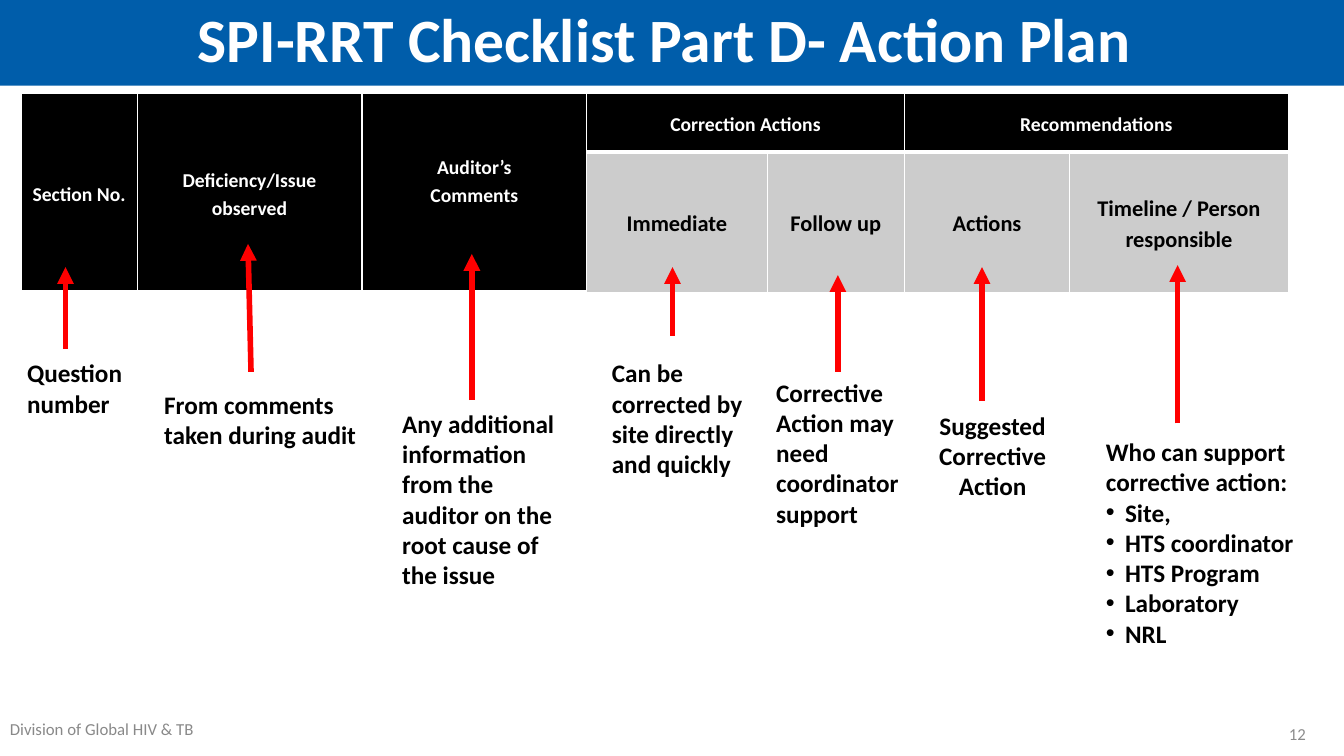
"""Build the action plan slide of the SPI-RRT checklist."""
from dataclasses import dataclass

from lxml.etree import SubElement as Sub
from pptx import Presentation
from pptx.dml.color import RGBColor as Rgb
from pptx.enum.shapes import MSO_CONNECTOR as Link
from pptx.enum.text import MSO_ANCHOR as Anchor, PP_ALIGN as Align
from pptx.oxml.ns import qn
from pptx.util import Inches, Pt

TITLE = "SPI-RRT Checklist Part D- Action Plan "
FOOTER = "Division of Global HIV & TB"
NUMBER = "12"

WIDTHS = [1.15, 2.23, 2.23, 1.79, 1.36, 1.64, 2.17]
HEIGHTS = [0.58, 1.39]
TALL = [["Section No."], ["Deficiency/Issue observed"], ["Auditor’s", "Comments"]]
GROUPS = {3: "Correction Actions", 5: "Recommendations"}
LOWER = ["Immediate", "Follow up", "Actions", "Timeline / Person responsible"]

NOTES = [
    (["Question number"], (0.17, 3.5, 1.73, 0.71), Align.LEFT),
    (["From comments taken during audit"], (1.53, 3.81, 2.38, 0.71), Align.LEFT),
    (["Any additional information from the auditor on the root cause of the issue"],
     (3.89, 4, 1.89, 1.92), Align.LEFT),
    (["Can be corrected by site directly and quickly"],
     (5.97, 3.5, 1.67, 1.31), Align.LEFT),
    (["Corrective Action may need coordinator support"],
     (7.6, 3.69, 1.84, 1.62), Align.LEFT),
    (["Suggested Corrective Action"], (9.01, 4.02, 1.67, 1.01), Align.CENTER),
    (["Who can support corrective action:", "• Site,", "• HTS coordinator",
      "• HTS Program", "• Laboratory", "• NRL"],
     (10.87, 4.28, 2.08, 2.22), Align.LEFT),
]
ARROWS = [
    (0.65, 3.46, 0.65, 2.65),
    (2.49, 3.69, 2.46, 2.42),
    (4.68, 3.97, 4.68, 2.52),
    (6.67, 3.33, 6.67, 2.65),
    (8.31, 3.69, 8.31, 2.73),
    (9.74, 3.98, 9.74, 2.65),
    (11.68, 4.2, 11.68, 2.63),
]


@dataclass(frozen=True)
class Theme:
    """Colours, font and type sizes."""
    font: str = "Calibri"
    blue: str = "005DAA"
    white: str = "FFFFFF"
    black: str = "000000"
    gray: str = "CCCCCC"
    faint: str = "898989"
    dim: str = "8C8C8C"
    red: str = "FF0000"
    title: int = 44
    note: int = 18
    lower: int = 16
    head: int = 14
    small: int = 12


LOOK = Theme()


def inch(*vals):
    """Turn numbers into lengths."""
    return [Inches(val) for val in vals]


def paint(item, tone):
    """Give a solid fill."""
    item.fill.solid()
    item.fill.fore_color.rgb = Rgb.from_string(tone)


def write(frame, lines, size=LOOK.note, tone=LOOK.black, bold=True,
          align=Align.LEFT, space=None, anchor=Anchor.TOP):
    """Set lines of text; a leading bullet makes a list item."""
    frame.word_wrap = True
    frame.vertical_anchor = anchor
    for rank, line in enumerate(lines):
        para = frame.paragraphs[0] if rank == 0 else frame.add_paragraph()
        para.alignment = align
        if space:
            para.line_spacing = space
        if line.startswith("• "):
            props = para._p.get_or_add_pPr()
            props.set("marL", str(Inches(0.19)))
            props.set("indent", str(-Inches(0.19)))
            Sub(props, qn("a:buFont"), typeface="Arial")
            Sub(props, qn("a:buChar"), char="•")
        run = para.add_run()
        run.text = line.removeprefix("• ")
        run.font.name = LOOK.font
        run.font.size = Pt(size)
        run.font.bold = bold
        run.font.color.rgb = Rgb.from_string(tone)


def label(slide, lines, box, **style):
    """Add a text box."""
    write(slide.shapes.add_textbox(*inch(*box)).text_frame, lines, **style)


def edge(cell, base):
    """Draw white cell borders."""
    props = cell._tc.get_or_add_tcPr()
    for side, wide in zip("LRTB", (1, 1, 1, base)):
        line = Sub(props, qn(f"a:ln{side}"), w=str(Pt(wide)))
        Sub(Sub(line, qn("a:solidFill")), qn("a:srgbClr"), val=LOOK.white)


def header(slide):
    """Add the title band."""
    band = slide.shapes.title
    band.left, band.top, band.width, band.height = inch(0, -0.01, 13.33, 0.86)
    paint(band, LOOK.blue)
    frame = band.text_frame
    frame.margin_left = frame.margin_right = Inches(0.3)
    write(frame, [TITLE], size=LOOK.title, tone=LOOK.white, align=Align.CENTER,
          space=0.9, anchor=Anchor.MIDDLE)


def plan(slide):
    """Add the table of column heads."""
    box = inch(0.21, 0.93, sum(WIDTHS), sum(HEIGHTS))
    grid = slide.shapes.add_table(len(HEIGHTS), len(WIDTHS), *box).table
    grid.horz_banding = False
    for col, wide in zip(grid.columns, WIDTHS):
        col.width = Inches(wide)
    for row, high in zip(grid.rows, HEIGHTS):
        row.height = Inches(high)

    texts = {(0, col): lines for col, lines in enumerate(TALL)}
    texts |= {(0, col): [text] for col, text in GROUPS.items()}
    texts |= {(1, col): [text] for col, text in enumerate(LOWER, len(TALL))}
    for row in range(len(HEIGHTS)):
        for col in range(len(WIDTHS)):
            cell = grid.cell(row, col)
            dark = row == 0 or col < len(TALL)
            edge(cell, 3 if row == 0 else 1)
            paint(cell, LOOK.black if dark else LOOK.gray)
            cell.margin_left = cell.margin_right = Inches(0.07)
            cell.margin_top = cell.margin_bottom = 0
            cell.vertical_anchor = Anchor.MIDDLE
            if (row, col) in texts:
                write(cell.text_frame, texts[row, col],
                      size=LOOK.head if dark else LOOK.lower,
                      tone=LOOK.white if dark else LOOK.black,
                      align=Align.CENTER, space=1.15, anchor=Anchor.MIDDLE)
    for col in range(len(TALL)):
        grid.cell(0, col).merge(grid.cell(1, col))
    for col in GROUPS:
        grid.cell(0, col).merge(grid.cell(0, col + 1))
    grid.cell(0, 2).margin_bottom = Inches(0.26)


def arrow(slide, ends):
    """Add a red arrow."""
    link = slide.shapes.add_connector(Link.STRAIGHT, *inch(*ends))
    link.line.width = Pt(4)
    link.line.color.rgb = Rgb.from_string(LOOK.red)
    Sub(link.line._get_or_add_ln(), qn("a:tailEnd"), type="triangle")
    Sub(link._element.spPr, qn("a:effectLst"))


def main():
    """Build and save the slide."""
    deck = Presentation()
    deck.slide_width, deck.slide_height = inch(13.33, 7.5)
    slide = deck.slides.add_slide(deck.slide_layouts[5])
    header(slide)
    plan(slide)
    for ends in ARROWS:
        arrow(slide, ends)
    for lines, box, align in NOTES:
        label(slide, lines, box, align=align)
    label(slide, [FOOTER], (0, 7.08, 2.17, 0.4), size=LOOK.small,
          tone=LOOK.faint, bold=False)
    label(slide, [NUMBER], (11.9, 7.08, 1.15, 0.4), size=LOOK.small,
          tone=LOOK.dim, bold=False, align=Align.RIGHT, anchor=Anchor.MIDDLE)
    deck.save("out.pptx")


if __name__ == "__main__":
    main()
